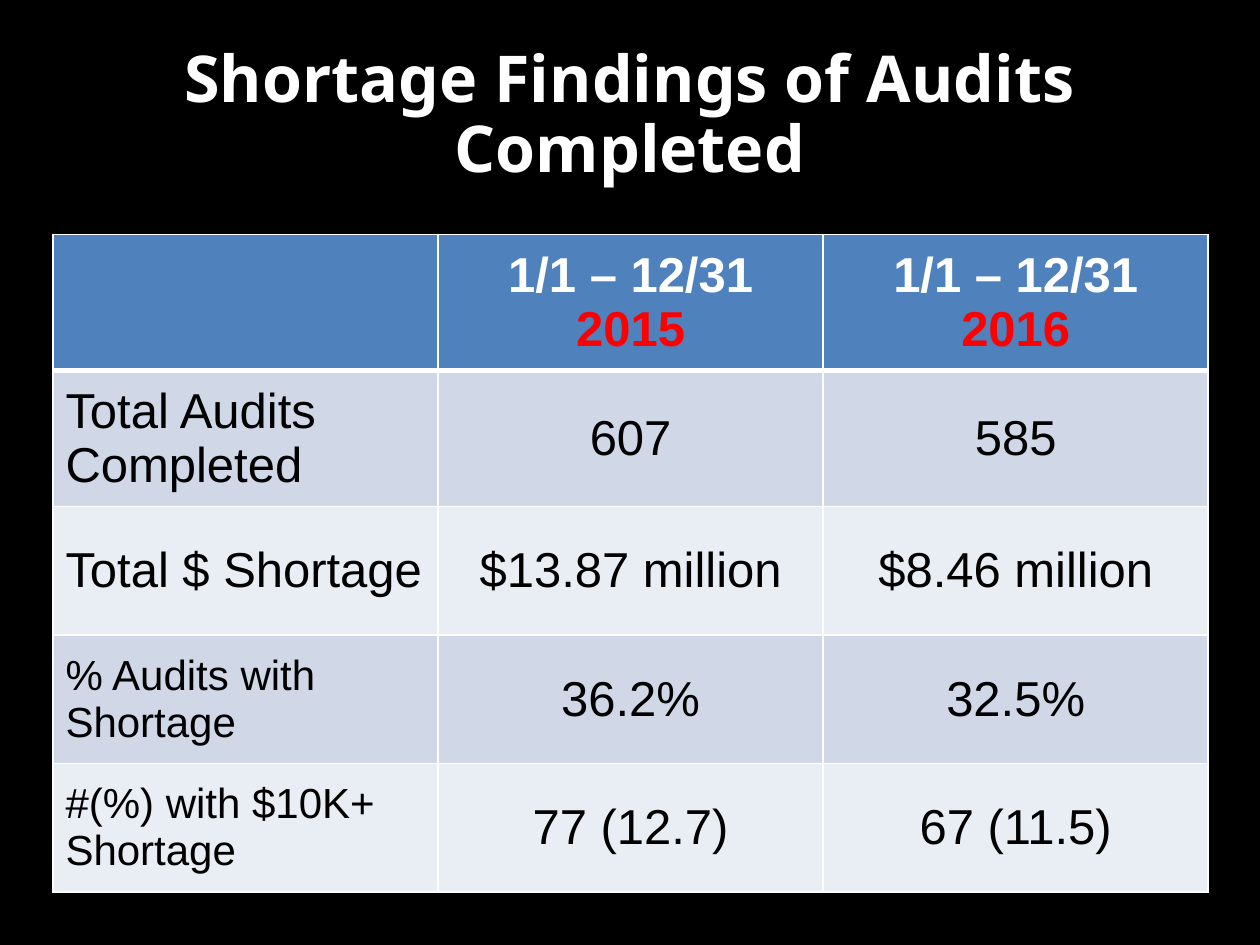
import lxml.etree
import pptx
import pptx.dml.color
import pptx.enum.text
import pptx.oxml.ns
import pptx.util

Inches = pptx.util.Inches
Pt = pptx.util.Pt
ALIGN = pptx.enum.text.PP_ALIGN
MIDDLE = pptx.enum.text.MSO_ANCHOR.MIDDLE


def color(value):
    return pptx.dml.color.RGBColor.from_string(value)


def add_border(cell, side, points):
    qn = pptx.oxml.ns.qn
    properties = cell._tc.get_or_add_tcPr()
    line = lxml.etree.SubElement(properties, qn(f"a:{side}"), w=str(Pt(points)))
    fill = lxml.etree.SubElement(line, qn("a:solidFill"))
    lxml.etree.SubElement(fill, qn("a:srgbClr"), val="FFFFFF")


presentation = pptx.Presentation()
presentation.slide_width = Inches(10)
presentation.slide_height = Inches(7.5)
slide = presentation.slides.add_slide(presentation.slide_layouts[6])
slide.background.fill.solid()
slide.background.fill.fore_color.rgb = color("000000")

title = slide.shapes.add_textbox(Inches(0.5), Inches(0.3), Inches(9), Inches(1.25))
title.text_frame.word_wrap = True
title.text_frame.vertical_anchor = MIDDLE
paragraph = title.text_frame.paragraphs[0]
paragraph.text = "Shortage Findings of Audits Completed"
paragraph.alignment = ALIGN.CENTER
paragraph.line_spacing = 0.9
paragraph.font.name = "Noto Sans"
paragraph.font.size = Pt(36.9)
paragraph.font.bold = True
paragraph.font.color.rgb = color("FFFFFF")

rows = [
    ["", "1/1 – 12/31\n2015", "1/1 – 12/31\n2016"],
    ["Total Audits Completed", "607", "585"],
    ["Total $ Shortage", "$13.87 million", "$8.46 million"],
    ["% Audits with Shortage", "36.2%", "32.5%"],
    ["#(%) with $10K+ Shortage", "77 (12.7)", "67 (11.5)"],
]
row_heights = [1.08, 1.08, 1.02, 1.02, 1.02]
row_fills = ["4F81BD", "D0D8E8", "E9EDF4", "D0D8E8", "E9EDF4"]

table = slide.shapes.add_table(
    len(rows), 3, Inches(0.42), Inches(1.86), Inches(9.17), Inches(sum(row_heights))
).table
for column in table.columns:
    column.width = Inches(9.17 / 3)

for row_index, texts in enumerate(rows):
    table.rows[row_index].height = Inches(row_heights[row_index])
    is_header = row_index == 0
    for column_index, text in enumerate(texts):
        cell = table.cell(row_index, column_index)
        cell.vertical_anchor = MIDDLE
        for side in ("lnL", "lnR", "lnT", "lnB"):
            at_header_edge = (row_index, side) in ((0, "lnB"), (1, "lnT"))
            add_border(cell, side, 3 if at_header_edge else 1)
        cell.fill.solid()
        cell.fill.fore_color.rgb = color(row_fills[row_index])
        cell.text = text
        is_small = column_index == 0 and row_index >= 3
        for line_index, paragraph in enumerate(cell.text_frame.paragraphs):
            paragraph.alignment = ALIGN.CENTER if column_index else ALIGN.LEFT
            paragraph.font.name = "Arial"
            paragraph.font.size = Pt(24 if is_small else 28)
            paragraph.font.bold = is_header
            header_color = "FF0000" if line_index else "FFFFFF"
            paragraph.font.color.rgb = color(header_color if is_header else "000000")

presentation.save("out.pptx")
